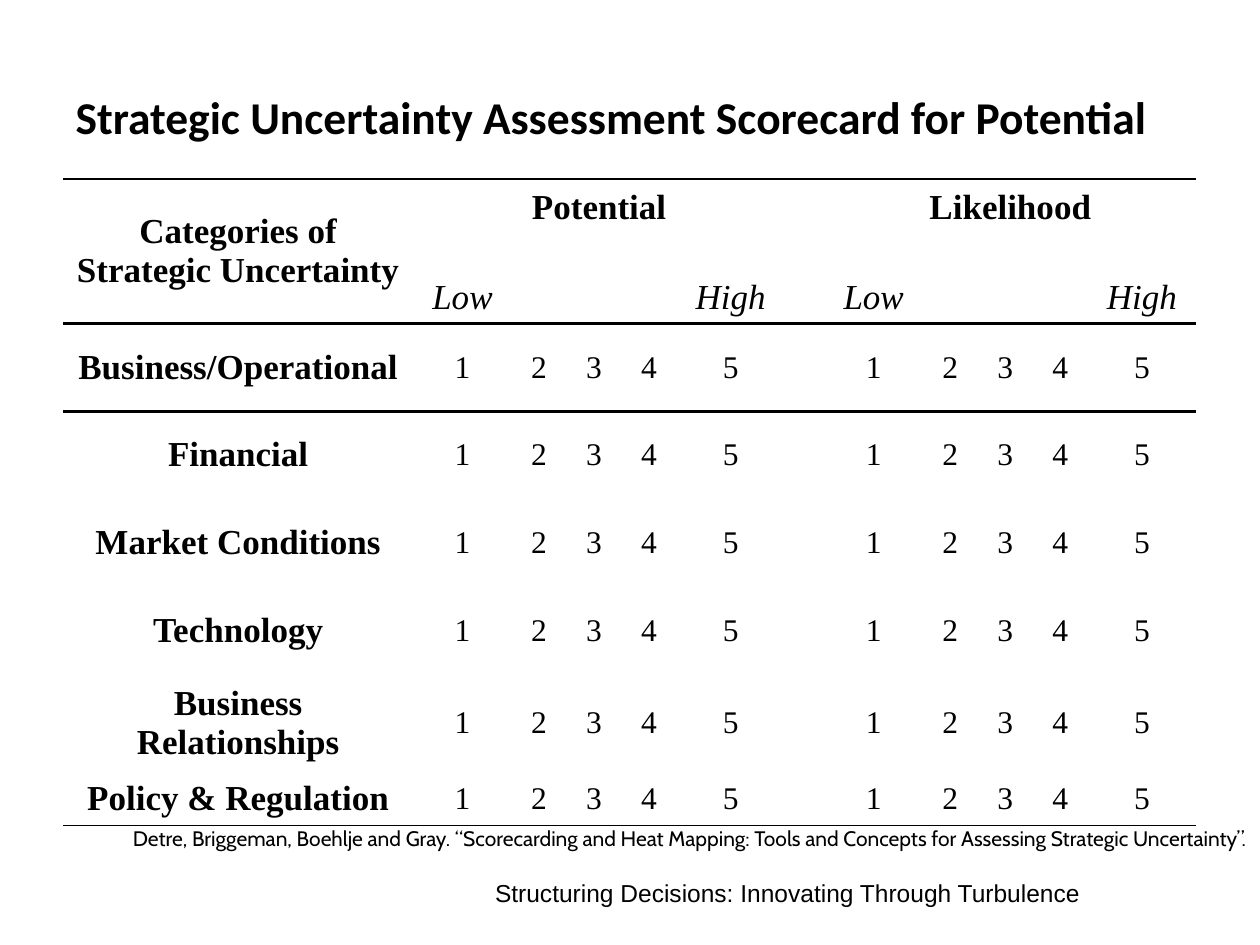
from dataclasses import dataclass

from lxml import etree
from pptx import Presentation
from pptx.dml.color import RGBColor
from pptx.enum.text import MSO_ANCHOR, PP_ALIGN
from pptx.oxml.ns import qn
from pptx.util import Pt

LEFT, CENTER, RIGHT = PP_ALIGN.LEFT, PP_ALIGN.CENTER, PP_ALIGN.RIGHT
TOP, MIDDLE, BOTTOM = MSO_ANCHOR.TOP, MSO_ANCHOR.MIDDLE, MSO_ANCHOR.BOTTOM
BLACK = "000000"
PLAIN_TABLE = "{2D5ABB26-0587-4C30-8999-92F81FD0307C}"

TABLE_LEFT, TABLE_TOP = 36, 102.2
SCALE_WIDTHS = [56.2, 31.4, 31.4, 31.4, 62]
COLUMN_WIDTHS = [200.2, *SCALE_WIDTHS, 22.7, *SCALE_WIDTHS]
ROW_HEIGHTS = [31, 51.5, 50.2, 50.2, 50.2, 50.2, 55.4, 31]
SCALES = {"Potential": 1, "Likelihood": 7}
CATEGORIES = [
    "Business/Operational",
    "Financial",
    "Market Conditions",
    "Technology",
    "Business Relationships",
    "Policy & Regulation",
]
BORDERS = {0: {"lnT": 1}, 1: {"lnB": 2}, 2: {"lnT": 2}, 7: {"lnB": 1}}

SERIF = {"name": "Times New Roman", "size": Pt(20), "bold": False}
HEADING = {**SERIF, "bold": True}
SCALE_END = {**SERIF, "italic": True}
SCORE = {**SERIF, "size": Pt(18)}


@dataclass
class Note:
    """A line of text below the table, measured in points."""

    text: str
    left: float
    top: float
    width: float
    height: float
    font: dict
    align: PP_ALIGN = LEFT


NOTES = [
    Note(
        "Detre, Briggeman, Boehlje and Gray. “Scorecarding and Heat Mapping: "
        "Tools and Concepts for Assessing Strategic Uncertainty”.",
        0, 468, 720, 21.6, {"name": "Cabin", "size": Pt(12)}, RIGHT,
    ),
    Note(
        "Structuring Decisions: Innovating Through Turbulence",
        275.8, 498.2, 372.2, 24.5, {"name": "Arial", "size": Pt(14)},
    ),
]


def color(value: str) -> RGBColor:
    """Turn a hex string into a colour."""
    return RGBColor.from_string(value)


def write(frame, text: str, font: dict, align: PP_ALIGN, anchor: MSO_ANCHOR) -> None:
    """Fill a text frame with one formatted paragraph."""
    frame.word_wrap = True
    frame.vertical_anchor = anchor
    para = frame.paragraphs[0]
    para.alignment = align
    span = para.add_run()
    span.text = text
    for name, value in font.items():
        setattr(span.font, name, value)
    span.font.color.rgb = color(BLACK)


def write_cell(cell, text: str, font: dict, anchor: MSO_ANCHOR = MIDDLE) -> None:
    """Write centred text in a table cell."""
    write(cell.text_frame, text, font, CENTER, anchor)
    cell.vertical_anchor = anchor


def add_border(cell, edge: str, width: float) -> None:
    """Draw a solid line along one edge of a cell."""
    properties = cell._tc.get_or_add_tcPr()
    line = etree.SubElement(properties, qn(f"a:{edge}"), w=str(Pt(width)))
    fill = etree.SubElement(line, qn("a:solidFill"))
    etree.SubElement(fill, qn("a:srgbClr"), val=BLACK)


def add_scorecard(page) -> None:
    """Build the table of categories and their two scoring scales."""
    table = page.shapes.add_table(
        len(ROW_HEIGHTS), len(COLUMN_WIDTHS), Pt(TABLE_LEFT), Pt(TABLE_TOP),
        Pt(sum(COLUMN_WIDTHS)), Pt(sum(ROW_HEIGHTS)),
    ).table
    table.first_row = table.horz_banding = False
    table._tbl.tblPr.find(qn("a:tableStyleId")).text = PLAIN_TABLE
    for column, width in zip(table.columns, COLUMN_WIDTHS):
        column.width = Pt(width)
    for index, (row, height) in enumerate(zip(table.rows, ROW_HEIGHTS)):
        row.height = Pt(height)
        for cell in row.cells:
            for edge, width in BORDERS.get(index, {}).items():
                add_border(cell, edge, width)
            cell.fill.background()

    corner = table.cell(0, 0)
    corner.merge(table.cell(1, 0))
    add_border_below_corner = {"lnB": 2}
    for edge, width in add_border_below_corner.items():
        line_cell = table.cell(0, 0)
        add_border(line_cell, edge, width)
        line_cell.fill.background()
        properties = line_cell._tc.tcPr
        properties.insert(1, properties.find(qn(f"a:{edge}")))
    write_cell(corner, "Categories of Strategic Uncertainty", HEADING)
    for heading, first in SCALES.items():
        last = first + len(SCALE_WIDTHS) - 1
        table.cell(0, first).merge(table.cell(0, last))
        write_cell(table.cell(0, first), heading, HEADING, BOTTOM)
        write_cell(table.cell(1, first), "Low", SCALE_END, BOTTOM)
        write_cell(table.cell(1, last), "High", SCALE_END, BOTTOM)
    for row, category in enumerate(CATEGORIES, start=2):
        write_cell(table.cell(row, 0), category, HEADING)
        for first in SCALES.values():
            for offset in range(len(SCALE_WIDTHS)):
                write_cell(table.cell(row, first + offset), str(offset + 1), SCORE)


def add_note(page, note: Note) -> None:
    """Add one line of text below the table."""
    box = page.shapes.add_textbox(
        Pt(note.left), Pt(note.top), Pt(note.width), Pt(note.height)
    )
    write(box.text_frame, note.text, note.font, note.align, TOP)


def main() -> None:
    """Build and save the scorecard slide."""
    deck = Presentation()
    deck.slide_width, deck.slide_height = Pt(720), Pt(540)
    page = deck.slides.add_slide(deck.slide_layouts[5])
    title = page.shapes.title
    title.left, title.top, title.width, title.height = Pt(36), Pt(21.6), Pt(648), Pt(90)
    write(
        title.text_frame,
        "Strategic Uncertainty Assessment Scorecard for Potential",
        {"name": "Calibri", "size": Pt(26), "bold": True}, LEFT, MIDDLE,
    )
    add_scorecard(page)
    for note in NOTES:
        add_note(page, note)
    deck.save("out.pptx")


if __name__ == "__main__":
    main()
